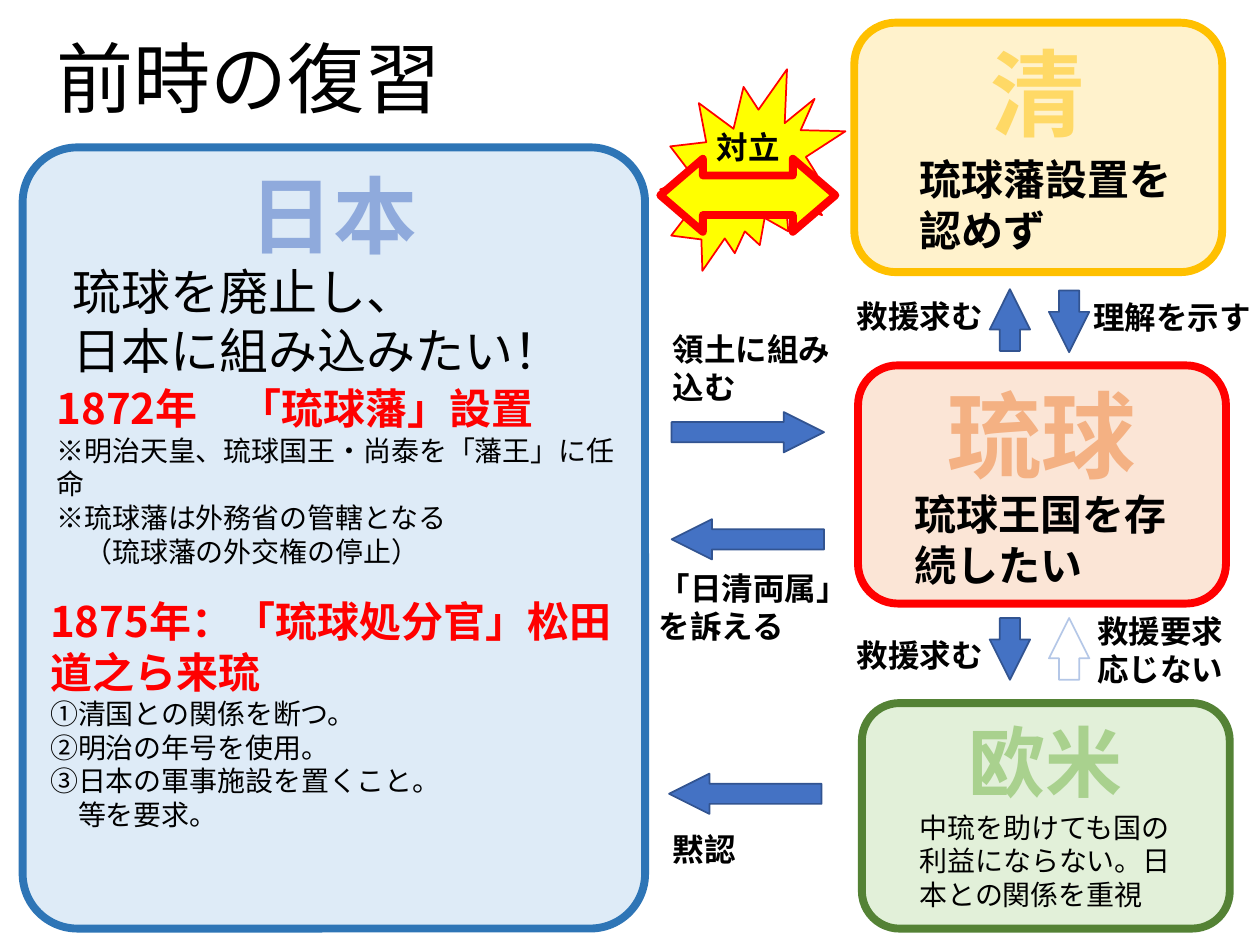
from lxml import etree
from pptx import Presentation
from pptx.dml.color import RGBColor
from pptx.enum.shapes import MSO_SHAPE
from pptx.enum.text import MSO_ANCHOR, MSO_AUTO_SIZE, PP_ALIGN
from pptx.oxml.ns import qn
from pptx.util import Inches, Pt

ROUNDED = MSO_SHAPE.ROUNDED_RECTANGLE
ARROW = MSO_SHAPE.RIGHT_ARROW
DOUBLE_ARROW = MSO_SHAPE.LEFT_RIGHT_ARROW
BURST = MSO_SHAPE.EXPLOSION2
TOP, MIDDLE = MSO_ANCHOR.TOP, MSO_ANCHOR.MIDDLE
LEFT, CENTER = PP_ALIGN.LEFT, PP_ALIGN.CENTER
FIXED = MSO_AUTO_SIZE.NONE

FONT = "Noto Sans CJK JP"
BLACK, RED, YELLOW = "000000", "FF0000", "FFFF00"
BLUE_ARROW = ("4472C4", "325491")
WHITE_ARROW = ("FFFFFF", "B4C7E7")
TITLE = "前時の復習"

# name, size, name colour, fill, line, corner, (left, top, width, height)
PANELS = [
    ("日本", 48, "8FAADC", "DEEBF7", "2E75B6", 0.088, (0.18, 1.17, 4.94, 6.2)),
    ("清", 54, "FFD966", "FFF2CC", "FFC000", 0.167, (6.78, 0.18, 2.92, 1.98)),
    ("琉球", 54, "F4B183", "FBE5D6", RED, 0.167, (6.81, 2.9, 2.92, 1.89)),
    ("欧米", 44, "A9D18E", "E2F0D9", "548235", 0.167, (6.84, 5.58, 2.92, 1.79)),
]

# left, top, length, rotation, (fill, line)
ARROWS = [
    (5.33, 3.27, 1.21, 0, BLUE_ARROW),
    (5.33, 4.12, 1.21, 180, BLUE_ARROW),
    (5.31, 6.14, 1.21, 180, BLUE_ARROW),
    (7.77, 2.38, 0.49, 270, BLUE_ARROW),
    (8.24, 2.39, 0.49, 90, BLUE_ARROW),
    (8.24, 4.99, 0.49, 270, WHITE_ARROW),
    (7.77, 4.99, 0.49, 90, BLUE_ARROW),
]
ARROW_THICKNESS = 0.32

CONFLICT = ("対立", (5.59, 0.97, 0.74, 0.4))

LABELS = [
    ("領土に組み込む", (5.24, 2.57, 1.46, 0.71)),
    ("「日清両属」を訴える", (5.13, 4.47, 1.71, 0.71)),
    ("黙認", (5.24, 6.54, 0.81, 0.4)),
    ("救援求む", (6.7, 2.31, 1.46, 0.4)),
    ("救援求む", (6.7, 5, 1.46, 0.4)),
    ("理解を示す", (8.58, 2.32, 1.46, 0.4)),
    ("救援要求応じない", (8.61, 4.81, 1.21, 0.71)),
]

# Text styles: size, colour, bold
LABEL = (18, BLACK, True)
HEADING = (24, RED, True)
STANCE = (24, BLACK, True)
GOAL = (28, BLACK, False)
DETAIL = (16, BLACK, False)

NOTES = [
    ((0.48, 2.03, 4.36, 1.04), [
        ("琉球を廃止し、", GOAL),
        ("日本に組み込みたい！", GOAL),
    ]),
    ((0.35, 2.99, 4.68, 1.31), [
        ("1872年　「琉球藩」設置", HEADING),
        ("※明治天皇、琉球国王・尚泰を「藩王」に任命", DETAIL),
        ("※琉球藩は外務省の管轄となる", DETAIL),
        ("　（琉球藩の外交権の停止）", DETAIL),
    ]),
    ((0.3, 4.68, 4.86, 1.99), [
        ("1875年：「琉球処分官」松田道之ら来琉", HEADING),
        ("①清国との関係を断つ。", DETAIL),
        ("②明治の年号を使用。", DETAIL),
        ("③日本の軍事施設を置くこと。", DETAIL),
        ("　等を要求。", DETAIL),
    ]),
    ((7.2, 1.17, 2.33, 0.91), [("琉球藩設置を認めず", STANCE)]),
    ((7.16, 3.83, 2.36, 0.91), [("琉球王国を存続したい", STANCE)]),
    ((7.2, 6.38, 2.36, 0.91),
     [("中琉を助けても国の利益にならない。日本との関係を重視", DETAIL)]),
]


def rgb(value):
    return RGBColor.from_string(value)


def inches(place):
    return [Inches(length) for length in place]


def write(frame, lines, align=LEFT):
    """Fill a text frame with one paragraph for each (text, style) pair."""
    frame.word_wrap = True
    for index, (text, (size, color, bold)) in enumerate(lines):
        para = frame.add_paragraph() if index else frame.paragraphs[0]
        para.alignment = align
        span = para.add_run()
        span.text = text
        span.font.size = Pt(size)
        span.font.bold = bold
        span.font.color.rgb = rgb(color)
        span.font.name = FONT
        latin = span.font._element.find(qn("a:latin"))
        latin.addnext(etree.Element(qn("a:ea"), typeface=FONT))


def add_text(shapes, place, lines):
    write(shapes.add_textbox(*inches(place)).text_frame, lines)


def add_figure(shapes, kind, place, fill, line, weight, adjustments=()):
    figure = shapes.add_shape(kind, *inches(place))
    figure.shadow.inherit = False
    figure.fill.solid()
    figure.fill.fore_color.rgb = rgb(fill)
    figure.line.color.rgb = rgb(line)
    figure.line.width = Pt(weight)
    for index, value in enumerate(adjustments):
        figure.adjustments[index] = value
    return figure


def add_panel(shapes, name, size, color, fill, line, corner, place):
    frame = add_figure(shapes, ROUNDED, place, fill, line, 4.5, [corner]).text_frame
    frame.margin_left = frame.margin_right = Inches(0.04)
    frame.margin_top = frame.margin_bottom = 0
    frame.vertical_anchor = TOP
    write(frame, [(name, (size, color, True))], CENTER)


def add_title(page):
    title = page.shapes.title
    title.left, title.top, title.width, title.height = inches((0.35, 0.21, 3.87, 0.89))
    frame = title.text_frame
    frame.auto_size = FIXED
    frame.vertical_anchor = MIDDLE
    write(frame, [(TITLE, (44, BLACK, False))])
    frame.paragraphs[0].line_spacing = 0.9


def add_conflict(page):
    group = page.shapes.add_group_shape().shapes
    add_figure(group, BURST, (5.24, 0.55, 1.47, 1.6), YELLOW, RED, 1)
    text, place = CONFLICT
    add_text(group, place, [(text, LABEL)])
    add_figure(group, DOUBLE_ARROW, (5.24, 1.26, 1.39, 0.58), YELLOW, RED, 4.5,
               [0.542, 0.583])


def main():
    deck = Presentation()
    deck.slide_width, deck.slide_height = Inches(10), Inches(7.5)
    page = deck.slides.add_slide(deck.slide_layouts[5])
    add_title(page)
    for panel in PANELS:
        add_panel(page.shapes, *panel)
    for left, top, length, rotation, (fill, line) in ARROWS:
        place = (left, top, length, ARROW_THICKNESS)
        arrow = add_figure(page.shapes, ARROW, place, fill, line, 1, [0.5, 1])
        arrow.rotation = rotation
    add_conflict(page)
    for text, place in LABELS:
        add_text(page.shapes, place, [(text, LABEL)])
    for place, lines in NOTES:
        add_text(page.shapes, place, lines)
    deck.save("out.pptx")


if __name__ == "__main__":
    main()
